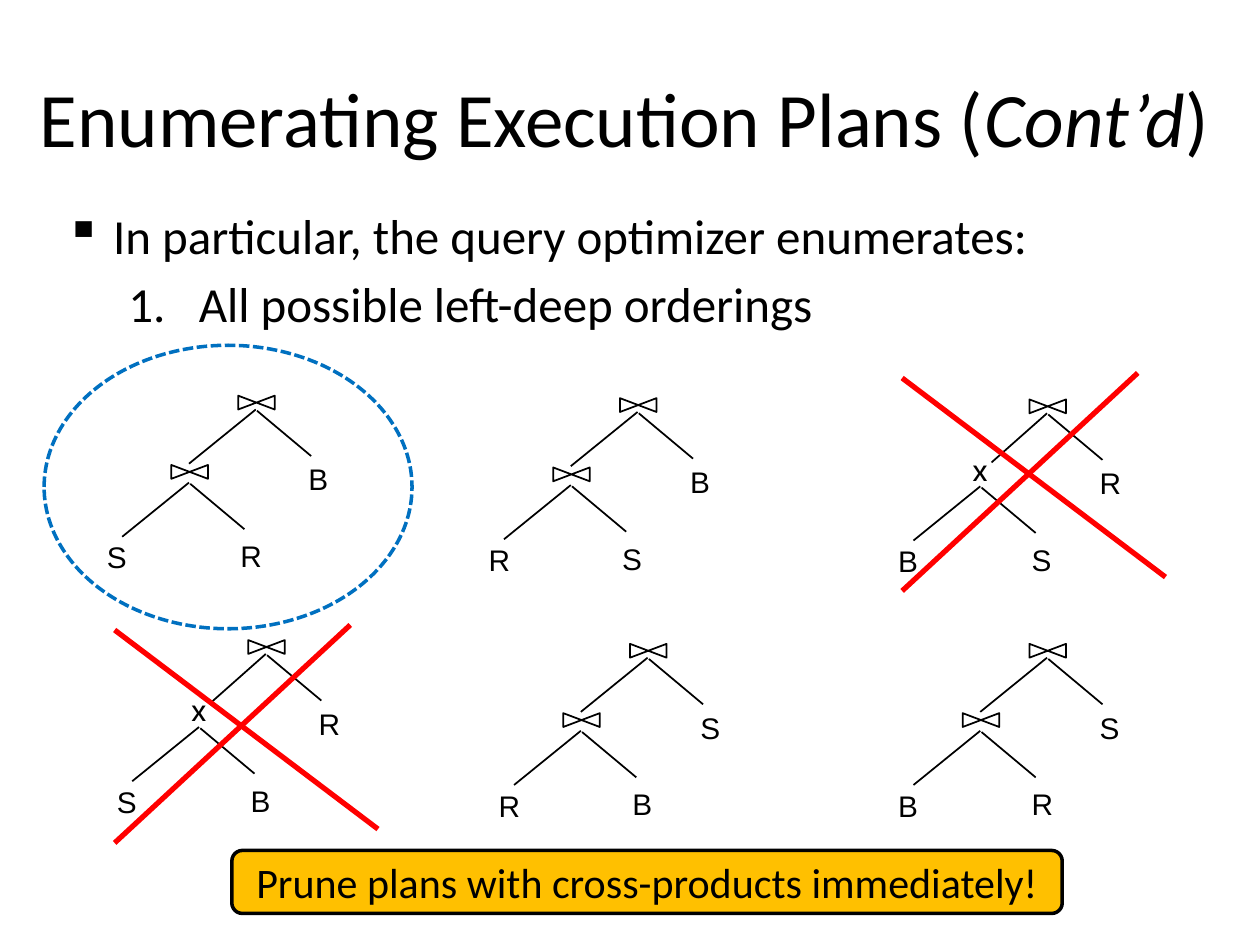
from lxml.etree import SubElement
from pptx import Presentation
from pptx.dml.color import RGBColor
from pptx.enum.dml import MSO_LINE_DASH_STYLE as Dash
from pptx.enum.shapes import MSO_CONNECTOR_TYPE as Connector, MSO_SHAPE as Shape
from pptx.enum.text import MSO_ANCHOR as Anchor, PP_ALIGN as Align
from pptx.oxml.ns import qn
from pptx.util import Inches, Pt

COLORS = {
    "ink": "000000",
    "cross": "FF0000",
    "banner": "FFC000",
    "ring": "0070C0",
}


def write_text(para, text, font="Calibri", size=28, italic=False):
    span = para.add_run()
    span.text = text
    span.font.name = font
    span.font.size = Pt(size)
    span.font.italic = italic
    span.font.color.rgb = RGBColor.from_string(COLORS["ink"])


def draw_line(start, end, color="ink", width=1):
    line = page.shapes.add_connector(
        Connector.STRAIGHT, *[Inches(value) for value in (*start, *end)]
    )
    line.line.color.rgb = RGBColor.from_string(COLORS[color])
    line.line.width = Pt(width)
    SubElement(line._element.spPr, qn("a:effectLst"))


deck = Presentation()
deck.slide_width = Inches(10)
deck.slide_height = Inches(7.5)
page = deck.slides.add_slide(deck.slide_layouts[6])

title = page.shapes.add_textbox(Inches(0.08), Inches(0.3), Inches(9.75), Inches(1.25))
title.text_frame.word_wrap = True
title.text_frame.vertical_anchor = Anchor.MIDDLE
para = title.text_frame.paragraphs[0]
para.alignment = Align.CENTER
write_text(para, "Enumerating Execution Plans (", size=44)
write_text(para, "Cont’d", size=44, italic=True)
write_text(para, ")", size=44)

body = page.shapes.add_textbox(Inches(0.42), Inches(1.58), Inches(9.26), Inches(5.75))
body.text_frame.word_wrap = True
points = [
    ("In particular, the query optimizer enumerates:", 0, 0.38, 0.38,
     "a:buChar", {"char": "▪"}),
    ("All possible left-deep orderings", 1, 1.06, 0.56,
     "a:buAutoNum", {"type": "arabicPeriod"}),
]
for text, level, margin, hanging, bullet, settings in points:
    para = body.text_frame.paragraphs[0] if level == 0 else body.text_frame.add_paragraph()
    para.level = level
    para.space_before = Pt(5.6)
    write_text(para, text)
    properties = para._p.get_or_add_pPr()
    properties.set("marL", str(Inches(margin)))
    properties.set("indent", str(-Inches(hanging)))
    SubElement(properties, qn(bullet), settings)

BOW_WIDTH, BOW_HEIGHT = 0.29, 0.11
trees = [
    (1.89, 3.14, "SRB", False),
    (4.92, 3.16, "RSB", False),
    (8.17, 3.17, "BSR", True),
    (1.97, 5.08, "SBR", True),
    (5.0, 5.11, "RBS", False),
    (8.17, 5.11, "BRS", False),
]
leaf_places = [(-1.14, 1.09), (-0.08, 1.08), (0.46, 0.47)]
for left, top, leaves, is_product in trees:
    joins = [(left, top)] if is_product else [(left, top), (left - 0.53, top + 0.55)]
    for x, y in joins:
        builder = page.shapes.build_freeform(Inches(x), Inches(y))
        corners = [
            (x + BOW_WIDTH, y + BOW_HEIGHT),
            (x + BOW_WIDTH, y),
            (x, y + BOW_HEIGHT),
        ]
        builder.add_line_segments([(Inches(a), Inches(b)) for a, b in corners], close=True)
        bow = builder.convert_to_shape()
        bow.shadow.inherit = False
        bow.fill.background()
        bow.line.color.rgb = RGBColor.from_string(COLORS["ink"])
        bow.line.width = Pt(1)

    inner_end = (-0.3, 0.5) if is_product else (-0.39, 0.54)
    branches = [
        (inner_end, (0.14, 0.11)),
        ((0.15, 0.12), (0.58, 0.48)),
        ((-0.92, 1.12), (-0.39, 0.69)),
        ((-0.38, 0.7), (0.05, 1.06)),
    ]
    for start, end in branches:
        draw_line((left + start[0], top + start[1]), (left + end[0], top + end[1]))

    labels = [(leaf, *place, 0.37, 0.38, "Arial", 17) for leaf, place in zip(leaves, leaf_places)]
    if is_product:
        labels.append(("x", -0.55, 0.35, 0.32, 0.4, "Cabin", 18))
    for text, dx, dy, width, height, font, size in labels:
        box = page.shapes.add_textbox(
            Inches(left + dx), Inches(top + dy), Inches(width), Inches(height)
        )
        box.text_frame.word_wrap = False
        write_text(box.text_frame.paragraphs[0], text, font=font, size=size)

for left, top in [(0.91, 4.96), (7.16, 2.96)]:
    draw_line((left, top + 0.04), (left + 2.09, top + 1.62), color="cross", width=3)
    draw_line((left, top + 1.73), (left + 1.87, top), color="cross", width=3)

banner = page.shapes.add_shape(
    Shape.ROUNDED_RECTANGLE, Inches(1.84), Inches(6.75), Inches(6.59), Inches(0.5)
)
banner.shadow.inherit = False
banner.fill.solid()
banner.fill.fore_color.rgb = RGBColor.from_string(COLORS["banner"])
banner.line.color.rgb = RGBColor.from_string(COLORS["ink"])
banner.line.width = Pt(2)
banner.text_frame.vertical_anchor = Anchor.MIDDLE
para = banner.text_frame.paragraphs[0]
para.alignment = Align.CENTER
write_text(para, "Prune plans with cross-products immediately!", size=24)

ring = page.shapes.add_shape(
    Shape.OVAL, Inches(0.35), Inches(2.74), Inches(2.92), Inches(2.25)
)
ring.shadow.inherit = False
ring.fill.background()
ring.line.color.rgb = RGBColor.from_string(COLORS["ring"])
ring.line.width = Pt(2)
ring.line.dash_style = Dash.SQUARE_DOT

deck.save("out.pptx")
